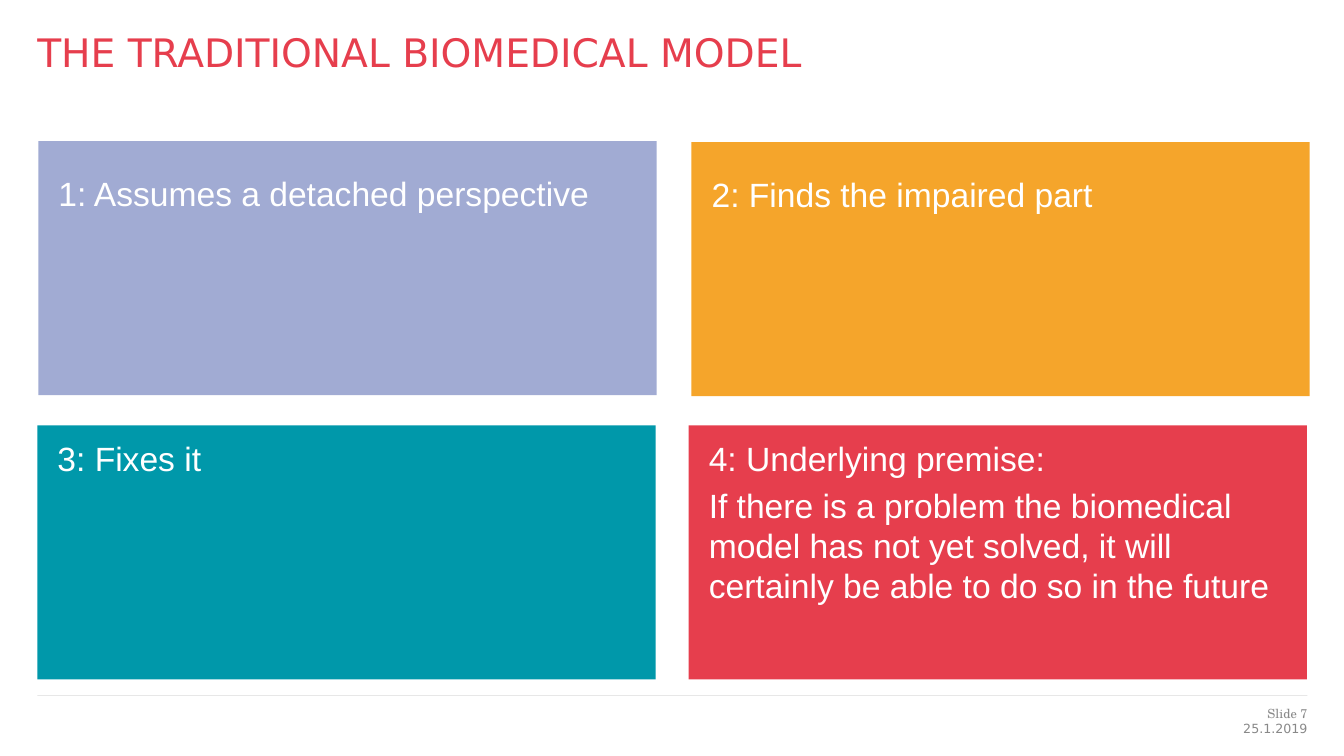
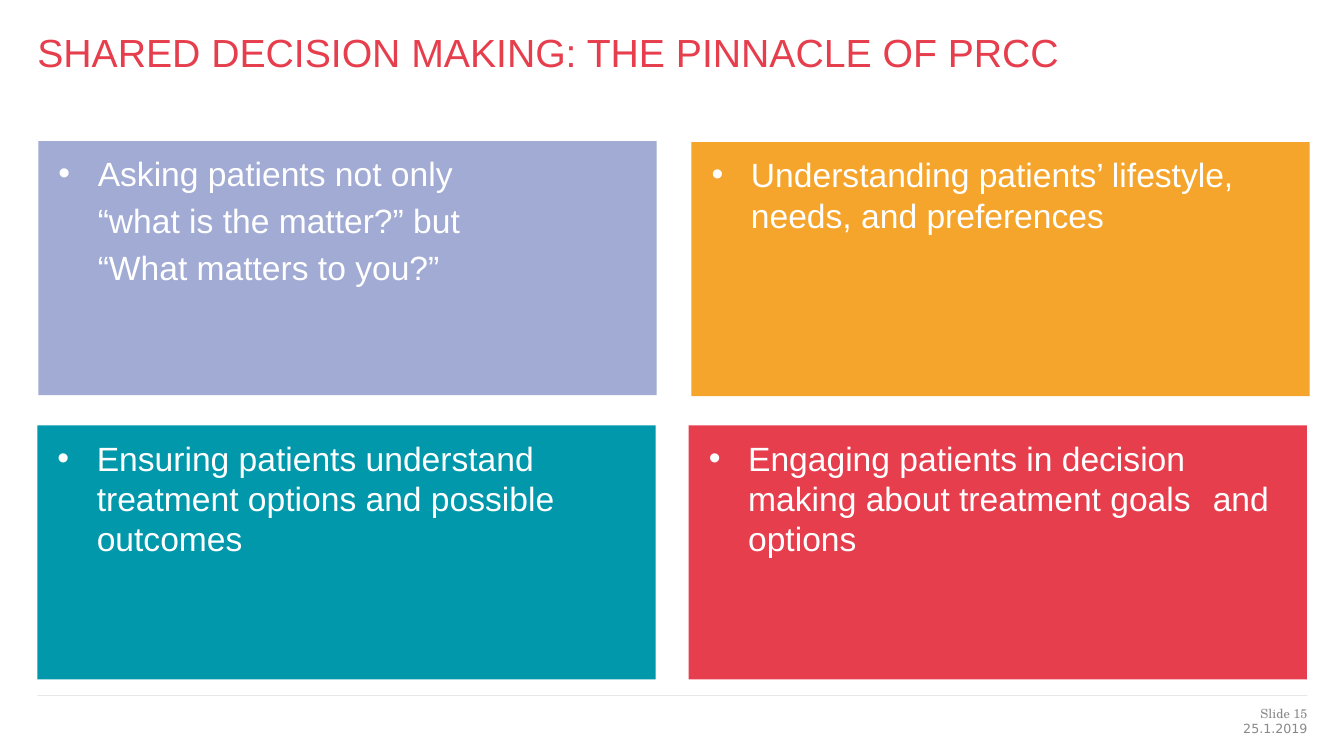
from dataclasses import dataclass

import pptx
import pptx.dml.color
import pptx.enum.shapes
import pptx.enum.text
import pptx.oxml.ns
import pptx.util
from lxml import etree

Pt = pptx.util.Pt
qn = pptx.oxml.ns.qn


@dataclass(frozen=True)
class Theme:
    red: str = "E63E4D"
    teal: str = "0098AA"
    lavender: str = "A1ABD3"
    orange: str = "F5A52B"
    white: str = "FFFFFF"
    grey: str = "898989"
    rule: str = "262626"
    sans: str = "Arial"
    wide: str = "DejaVu Sans"
    serif: str = "TeX Gyre Schola"
    title_size: int = 28
    body_size: int = 24
    footer_size: int = 9


THEME = Theme()
DATE = "25.1.2019"
SLIDES = [
    {
        "title": "THE TRADITIONAL BIOMEDICAL MODEL",
        "title_font": THEME.wide,
        "number": "Slide 7",
        "bullets": False,
        "tiles": [
            ["1: Assumes a detached perspective"],
            ["2: Finds the impaired part"],
            ["3: Fixes it"],
            ["4: Underlying premise:",
             "If there is a problem the biomedical model has not yet solved, "
             "it will certainly be able to do so in the future"],
        ],
        "line_spacing": [1.5, 1.5, None, None],
    },
    {
        "title": "SHARED DECISION MAKING: THE PINNACLE OF PRCC",
        "title_font": THEME.sans,
        "number": "Slide 15",
        "bullets": True,
        "tiles": [
            ["Asking patients not only", "“what is the matter?” but", "“What matters to you?”"],
            ["Understanding patients’ lifestyle, needs, and preferences"],
            ["Ensuring patients understand treatment options and possible outcomes"],
            ["Engaging patients in decision making about treatment goals \tand options"],
        ],
        "line_spacing": [None] * 4,
    },
]

LEFT, RIGHT = 26.64, 933.84
TILE_W, TILE_H = 441.6, 181.44
TILES = [
    (27.36, 100.8, THEME.lavender),
    (493.92, 101.52, THEME.orange),
    (LEFT, 303.84, THEME.teal),
    (491.9, 303.84, THEME.red),
]
TILE_INSETS = (14.4, 8.64, 8.64, 8.64)
INDENT = 28.08
PARAGRAPH_GAP = 4.8


def rgb(value):
    return pptx.dml.color.RGBColor.from_string(value)


def write(sp, lines, font, size, color, align="LEFT", insets=(0, 0, 0, 0)):
    tf = sp.text_frame
    tf.word_wrap = True
    tf.vertical_anchor = pptx.enum.text.MSO_ANCHOR.TOP
    tf.margin_left, tf.margin_top, tf.margin_right, tf.margin_bottom = map(Pt, insets)
    tf.text = "\n".join(lines)
    for p in tf.paragraphs:
        p.alignment = getattr(pptx.enum.text.PP_ALIGN, align)
        for r in p.runs:
            r.font.name = font
            r.font.size = Pt(size)
            r.font.color.rgb = rgb(color)
    return tf


def add_text(slide, box, *style):
    write(slide.shapes.add_textbox(*map(Pt, box)), *style)


def indent(p, bullet):
    ppr = p._p.get_or_add_pPr()
    ppr.set("marL", str(Pt(INDENT)))
    ppr.set("indent", str(-Pt(INDENT) if bullet else 0))
    if bullet:
        etree.SubElement(ppr, qn("a:buFont"), typeface=THEME.sans)
        etree.SubElement(ppr, qn("a:buChar"), char="•")
    tabs = etree.SubElement(ppr, qn("a:tabLst"))
    etree.SubElement(tabs, qn("a:tab"), pos=str(Pt(INDENT)), algn="l")


def add_tile(slide, place, lines, bullets, line_spacing):
    x, y, color = place
    sp = slide.shapes.add_shape(
        pptx.enum.shapes.MSO_SHAPE.RECTANGLE, Pt(x), Pt(y), Pt(TILE_W), Pt(TILE_H))
    sp.shadow.inherit = False
    sp.fill.solid()
    sp.fill.fore_color.rgb = rgb(color)
    sp.line.fill.background()
    tf = write(sp, lines, THEME.sans, THEME.body_size, THEME.white, "LEFT", TILE_INSETS)
    for i, p in enumerate(tf.paragraphs):
        if bullets:
            indent(p, i == 0)
        if i:
            p.space_before = Pt(PARAGRAPH_GAP)
        if line_spacing:
            p.line_spacing = line_spacing


def add_frame(slide, title, title_font, number):
    line = slide.shapes.add_connector(
        pptx.enum.shapes.MSO_CONNECTOR.STRAIGHT, Pt(LEFT), Pt(496.8), Pt(RIGHT), Pt(496.8))
    line.line.width = Pt(0.25)
    line.line.color.rgb = rgb(THEME.rule)
    color = line._element.spPr.find(".//" + qn("a:srgbClr"))
    etree.SubElement(color, qn("a:alpha"), val="31000")
    etree.SubElement(line._element.spPr, qn("a:effectLst"))
    add_text(slide, (LEFT, 20.16, RIGHT - LEFT, 67.68),
             [title], title_font, THEME.title_size, THEME.red)
    for y, h, text, font in ((504, 10.08, number, THEME.serif), (514.8, 14.4, DATE, THEME.wide)):
        add_text(slide, (800, y, RIGHT - 800, h),
                 [text], font, THEME.footer_size, THEME.grey, "RIGHT")


def main():
    prs = pptx.Presentation()
    prs.slide_width, prs.slide_height = Pt(960), Pt(540)
    for content in SLIDES:
        slide = prs.slides.add_slide(prs.slide_layouts[6])
        add_frame(slide, content["title"], content["title_font"], content["number"])
        for place, lines, spacing in zip(TILES, content["tiles"], content["line_spacing"]):
            add_tile(slide, place, lines, content["bullets"], spacing)
    prs.save("out.pptx")


if __name__ == "__main__":
    main()
